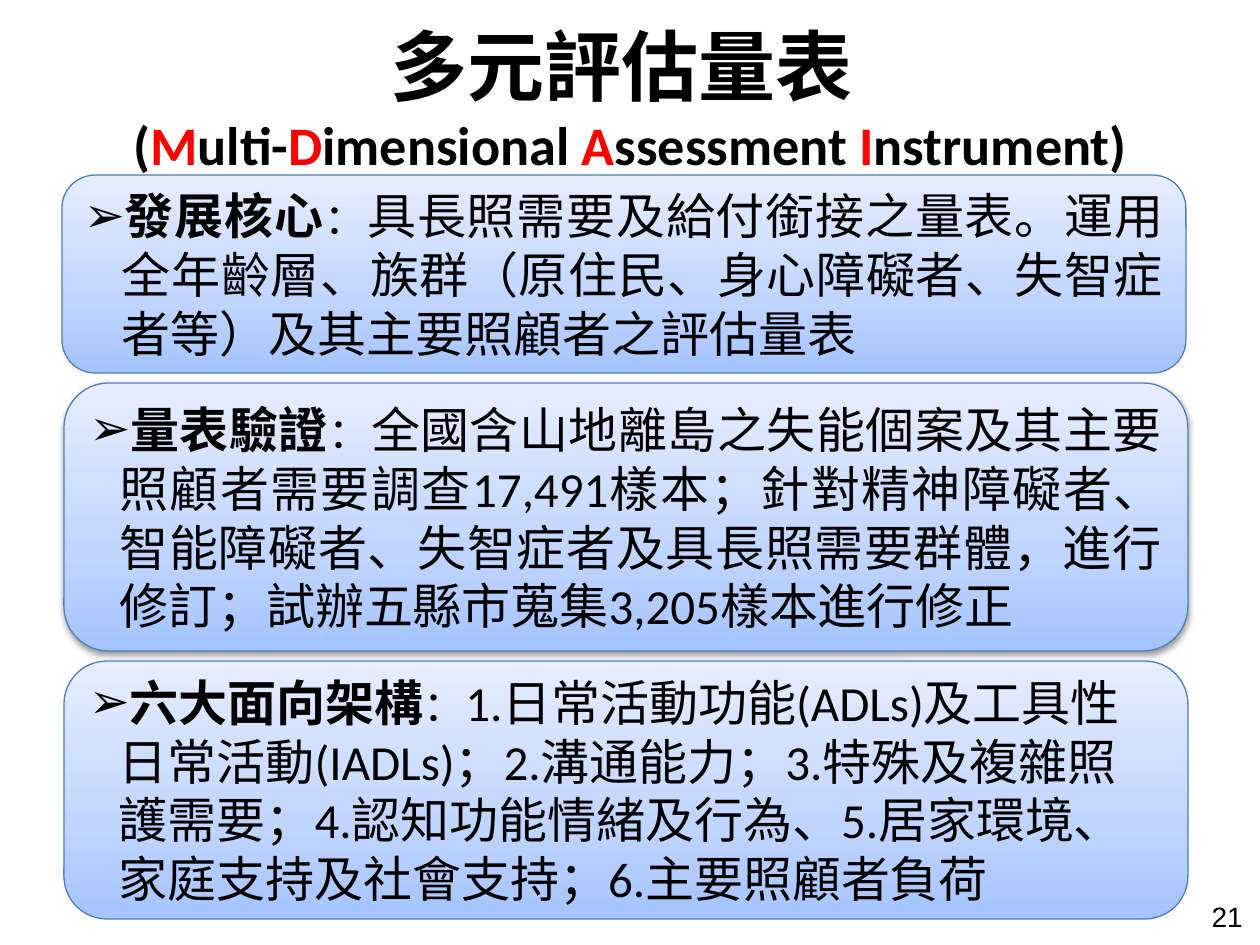
from lxml import etree
from pptx import Presentation
from pptx import util as u
from pptx.dml.color import RGBColor
from pptx.enum import shapes, text
from pptx.oxml import ns, parse_xml

PX = 914400 / 126
COLORS = {"ink": "000000", "accent": "FF0000", "edge": "4B7EBC",
          "low": "A4C4FF", "mid": "BFD4FF", "high": "E6EEFF"}
CJK, LATIN = "Noto Sans CJK SC", "Calibri"
LEFT, JUSTIFY = text.PP_ALIGN.LEFT, text.PP_ALIGN.JUSTIFY

SECTIONS = [
    {"box": (62, 175, 1124, 198), "indent": 38, "align": JUSTIFY, "shadow": False,
     "heading": "發展核心",
     "body": "具長照需要及給付銜接之量表。運用全年齡層、族群（原住民、身心障礙者、失智症者等）"
             "及其主要照顧者之評估量表"},
    {"box": (64, 383, 1124, 268), "indent": 30, "align": JUSTIFY, "shadow": True,
     "heading": "量表驗證",
     "body": "全國含山地離島之失能個案及其主要照顧者需要調查17,491樣本；針對精神障礙者、"
             "智能障礙者、失智症者及具長照需要群體，進行修訂；試辦五縣市蒐集3,205樣本進行修正"},
    {"box": (64, 661, 1124, 258), "indent": 30, "align": LEFT, "shadow": False,
     "heading": "六大面向架構",
     "body": "1.日常活動功能(ADLs)及工具性日常活動(IADLs)；2.溝通能力；3.特殊及複雜照護需要；"
             "4.認知功能情緒及行為、5.居家環境、家庭支持及社會支持；6.主要照顧者負荷"},
]


def px(length):
    """Turn whole px into EMU."""
    return u.Emu(round(length * PX))


def rgb(key):
    """Look up a colour by its role."""
    return RGBColor.from_string(COLORS[key])


def set_all(target, formats):
    """Set each attribute of target from a dict of format values."""
    for attribute, value in formats.items():
        setattr(target, attribute, value)


def place(shape, box):
    """Move a shape to a px box."""
    set_all(shape, dict(zip(("left", "top", "width", "height"), map(px, box))))


def add_run(paragraph, wording, size, bold=False, name=LATIN, color="ink"):
    """Append one formatted run with an East Asian font."""
    run = paragraph.add_run()
    run.text = wording
    set_all(run.font, {"size": u.Pt(size), "bold": bold, "name": name})
    run.font.color.rgb = rgb(color)
    east_asian = etree.SubElement(run.font._element, ns.qn("a:ea"))
    east_asian.set("typeface", CJK)


def add_title(slide, box):
    """Fill the title with the scale's name and its marked English initials."""
    title = slide.shapes.title
    place(title, box)
    set_all(title.text_frame, {"word_wrap": True, "auto_size": text.MSO_AUTO_SIZE.NONE,
                               "vertical_anchor": text.MSO_ANCHOR.MIDDLE})
    line = title.text_frame.paragraphs[0]
    line.alignment = text.PP_ALIGN.CENTER
    add_run(line, "多元評估量表 ", 44, True, CJK)
    line.add_line_break()
    add_run(line, "(", 31, True)
    for initial, rest in (("M", "ulti-"), ("D", "imensional "),
                          ("A", "ssessment "), ("I", "nstrument)")):
        add_run(line, initial, 31, True, color="accent")
        add_run(line, rest, 31, True)


def add_gradient(panel):
    """Fill a panel with the three-stop blue gradient rising from its foot."""
    stops = "".join(f'<a:gs pos="{pos}"><a:srgbClr val="{COLORS[key]}"/></a:gs>'
                    for pos, key in ((0, "low"), (35000, "mid"), (100000, "high")))
    gradient = parse_xml(f'<a:gradFill {ns.nsdecls("a")} rotWithShape="1"><a:gsLst>{stops}'
                         '</a:gsLst><a:lin ang="16200000" scaled="1"/></a:gradFill>')
    panel._element.spPr.find(ns.qn("a:prstGeom")).addnext(gradient)


def add_shadow(panel):
    """Give a panel a soft shadow below."""
    effects = panel._element.spPr.find(ns.qn("a:effectLst"))
    effects.append(parse_xml(
        f'<a:outerShdw {ns.nsdecls("a")} blurRad="{u.Pt(3.1)}" dist="{u.Pt(1.6)}" '
        f'dir="5400000" rotWithShape="0"><a:srgbClr val="{COLORS["ink"]}">'
        '<a:alpha val="38000"/></a:srgbClr></a:outerShdw>'))


def add_bullet(paragraph, indent):
    """Hang an arrow bullet in the given indent."""
    properties = paragraph._p.get_or_add_pPr()
    set_all_xml = {"marL": px(indent), "indent": -px(indent)}
    for attribute, value in set_all_xml.items():
        properties.set(attribute, str(value))
    etree.SubElement(properties, ns.qn("a:buFont")).set("typeface", "Arial")
    etree.SubElement(properties, ns.qn("a:buChar")).set("char", "➢")


def add_section(slide, box, heading, body, indent, align, shadow):
    """Draw one rounded panel with its bulleted heading and body."""
    panel = slide.shapes.add_shape(shapes.MSO_SHAPE.ROUNDED_RECTANGLE, *map(px, box))
    panel.shadow.inherit = False
    add_gradient(panel)
    panel.line.color.rgb = rgb("edge")
    panel.line.width = u.Pt(0.75)
    if shadow:
        add_shadow(panel)
    set_all(panel.text_frame, {"word_wrap": True, "vertical_anchor": text.MSO_ANCHOR.MIDDLE})
    paragraph = panel.text_frame.paragraphs[0]
    paragraph.alignment = align
    add_bullet(paragraph, indent)
    add_run(paragraph, heading, 28, True)
    add_run(paragraph, "：", 24, name=CJK)
    add_run(paragraph, body, 28)


def add_page_number(slide, box):
    """Write the page number at the lower right."""
    number = slide.shapes.add_textbox(*map(px, box))
    number.text_frame.word_wrap = True
    paragraph = number.text_frame.paragraphs[0]
    paragraph.alignment = text.PP_ALIGN.RIGHT
    add_run(paragraph, "21", 16, name="Arial")


def main():
    """Build and save the slide."""
    deck = Presentation()
    set_all(deck, {"slide_width": px(1260), "slide_height": px(945)})
    slide = deck.slides.add_slide(deck.slide_layouts[5])
    add_title(slide, (63, -1, 1134, 197))
    add_page_number(slide, (1186, 893, 69, 66))
    for section in SECTIONS:
        add_section(slide, **section)
    deck.save("out.pptx")


if __name__ == "__main__":
    main()
